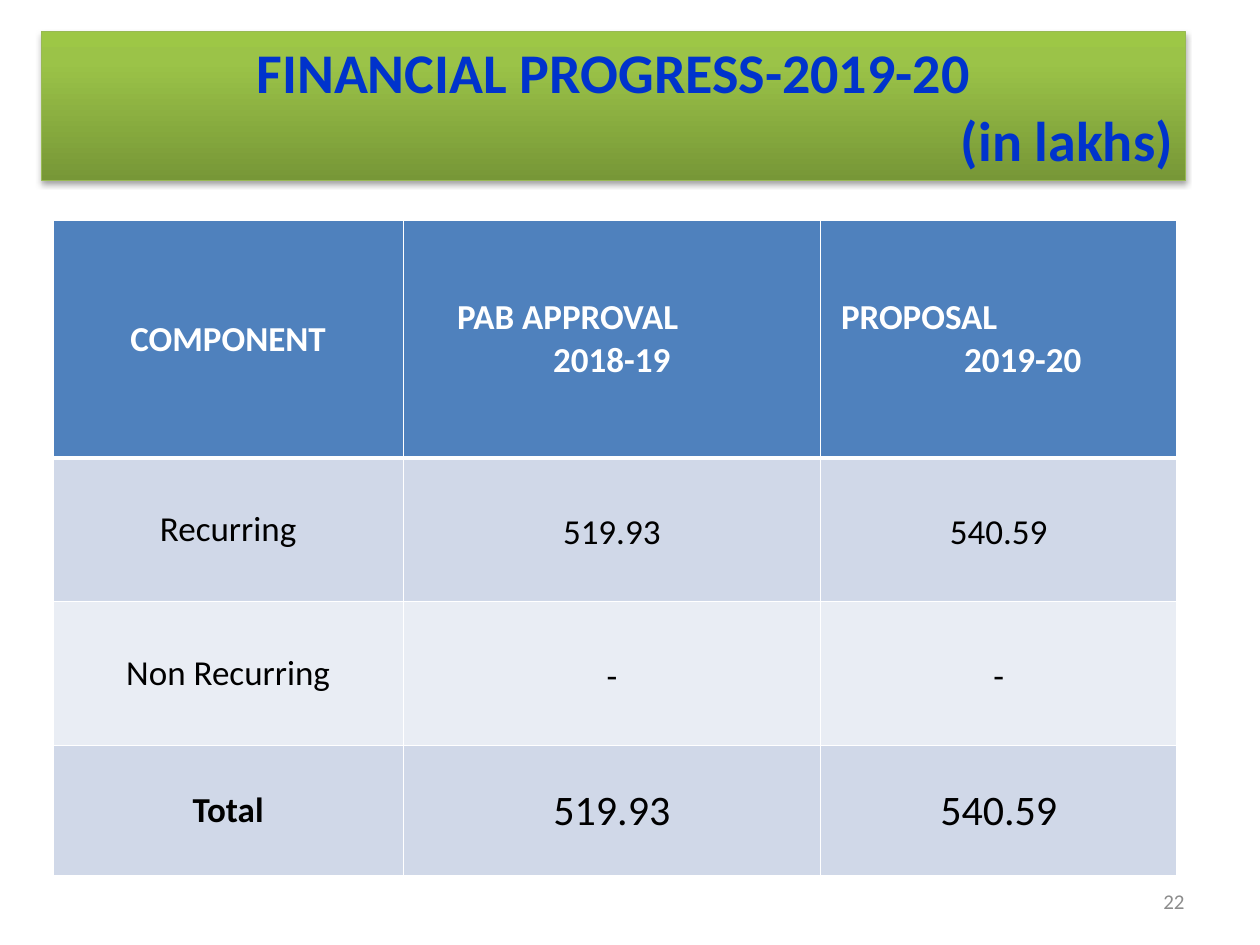
from copy import deepcopy

from lxml import etree
from pptx import Presentation
from pptx.dml import color
from pptx.enum import shapes, text
from pptx.oxml import ns
from pptx.util import Cm, Pt

FONT = "Calibri"
CENTER = text.PP_ALIGN.CENTER
LEFT = text.PP_ALIGN.LEFT
RIGHT = text.PP_ALIGN.RIGHT
COLUMN_WIDTHS = [7.06, 8.41, 7.19]
ROW_HEIGHTS = [4.78, 2.9, 2.9, 2.62]
HEADINGS = [
    [("COMPONENT", CENTER, 0)],
    [("PAB APPROVAL", LEFT, 0.83), ("2018-19", CENTER, 0)],
    [("PROPOSAL", LEFT, 0.16), ("2019-20", CENTER, 0.97)],
]
ROWS = [
    ("Recurring", "519.93", "540.59"),
    ("Non Recurring", "-", "-"),
    ("Total", "519.93", "540.59"),
]
ROW_FILLS = ["D0D8E8", "E9EDF4", "D0D8E8"]


def rgb(value):
    return color.RGBColor.from_string(value)


def add_child(parent, tag, **attributes):
    child = etree.SubElement(parent, ns.qn(tag))
    for name, value in attributes.items():
        child.set(name, str(value))
    return child


def style_paragraph(paragraph, size, hex_color, bold, alignment):
    paragraph.alignment = alignment
    for run in paragraph.runs:
        run.font.name = FONT
        run.font.size = Pt(size)
        run.font.bold = bold
        run.font.color.rgb = rgb(hex_color)


def fill_gradient(shape, stops, angle):
    shape.fill.gradient()
    shape.fill.gradient_angle = angle
    stop_list = shape.fill._fill._gradFill.gsLst
    stop_list.append(deepcopy(stop_list[-1]))
    for stop, (position, hex_color) in zip(shape.fill.gradient_stops, stops):
        stop.position = position
        stop.color.rgb = rgb(hex_color)


def add_soft_shadow(shape):
    shape.shadow.inherit = False
    effects = shape._element.spPr.find(ns.qn("a:effectLst"))
    shadow = add_child(effects, "a:outerShdw", blurRad=Pt(3.1), dist=Pt(1.8),
                       dir=90 * 60000, rotWithShape=0)
    shadow_color = add_child(shadow, "a:srgbClr", val="000000")
    add_child(shadow_color, "a:alpha", val=35000)


def add_title_banner(slide, left, top, width, height):
    banner = slide.shapes.add_shape(shapes.MSO_SHAPE.RECTANGLE,
                                    Cm(left), Cm(top), Cm(width), Cm(height))
    fill_gradient(banner, [(0, "779737"), (0.8, "9BC348"), (1, "9DC746")], 90)
    banner.line.color.rgb = rgb("98B955")
    banner.line.width = Pt(0.75)
    add_soft_shadow(banner)
    frame = banner.text_frame
    frame.vertical_anchor = text.MSO_ANCHOR.TOP
    frame.text = "FINANCIAL PROGRESS-2019-20\n(in lakhs)"
    for paragraph, alignment in zip(frame.paragraphs, [CENTER, RIGHT]):
        style_paragraph(paragraph, 32, "0033CC", True, alignment)


def style_cell(cell, hex_color, top=1, bottom=1):
    cell.vertical_anchor = text.MSO_ANCHOR.MIDDLE
    properties = cell._tc.get_or_add_tcPr()
    for side, width in zip("LRTB", [1, 1, top, bottom]):
        line = add_child(properties, f"a:ln{side}", w=Pt(width))
        add_child(add_child(line, "a:solidFill"), "a:srgbClr", val="FFFFFF")
    cell.fill.solid()
    cell.fill.fore_color.rgb = rgb(hex_color)


def set_margins(cell, side, top):
    cell.margin_left = cell.margin_right = Cm(side)
    cell.margin_top = Cm(top)
    cell.margin_bottom = 0


def fill_heading(cell, lines):
    style_cell(cell, "4F81BD", bottom=3)
    cell.text_frame.text = "\n".join(line[0] for line in lines)
    for paragraph, (_, alignment, indent) in zip(cell.text_frame.paragraphs, lines):
        style_paragraph(paragraph, 20, "FFFFFF", True, alignment)
        paragraph._p.get_or_add_pPr().set("marL", str(Cm(indent)))


def fill_body_cell(cell, value, is_label, is_total):
    cell.text_frame.text = value
    paragraph = cell.text_frame.paragraphs[0]
    size = 24 if is_total and not is_label else 20
    style_paragraph(paragraph, size, "000000", is_label and is_total, CENTER)
    if is_label:
        return
    if is_total:
        set_margins(cell, 0.03, 0.03)
    else:
        set_margins(cell, 0.18, 0)
        paragraph.line_spacing = 1.15
        paragraph.space_after = Pt(10)


def add_progress_table(slide, left, top):
    table = slide.shapes.add_table(
        len(ROW_HEIGHTS), len(COLUMN_WIDTHS), Cm(left), Cm(top),
        Cm(sum(COLUMN_WIDTHS)), Cm(sum(ROW_HEIGHTS))).table
    for column, width in zip(table.columns, COLUMN_WIDTHS):
        column.width = Cm(width)
    for row, height in zip(table.rows, ROW_HEIGHTS):
        row.height = Cm(height)
    for index, lines in enumerate(HEADINGS):
        fill_heading(table.cell(0, index), lines)
    for row_index, (values, hex_color) in enumerate(zip(ROWS, ROW_FILLS), start=1):
        for index, value in enumerate(values):
            cell = table.cell(row_index, index)
            style_cell(cell, hex_color, top=3 if row_index == 1 else 1)
            fill_body_cell(cell, value, index == 0, row_index == len(ROWS))


def add_page_number(slide, left, top, width, height):
    box = slide.shapes.add_textbox(Cm(left), Cm(top), Cm(width), Cm(height))
    frame = box.text_frame
    frame.word_wrap = True
    frame.vertical_anchor = text.MSO_ANCHOR.MIDDLE
    frame.text = "22"
    style_paragraph(frame.paragraphs[0], 12, "8C8C8C", False, RIGHT)


def main():
    presentation = Presentation()
    presentation.slide_width = Cm(25.4)
    presentation.slide_height = Cm(19.05)
    slide = presentation.slides.add_slide(presentation.slide_layouts[6])
    add_title_banner(slide, 0.84, 0.64, 23.06, 3)
    add_page_number(slide, 18.21, 17.65, 5.92, 1.02)
    add_progress_table(slide, 1.07, 4.45)
    presentation.save("out.pptx")


if __name__ == "__main__":
    main()
